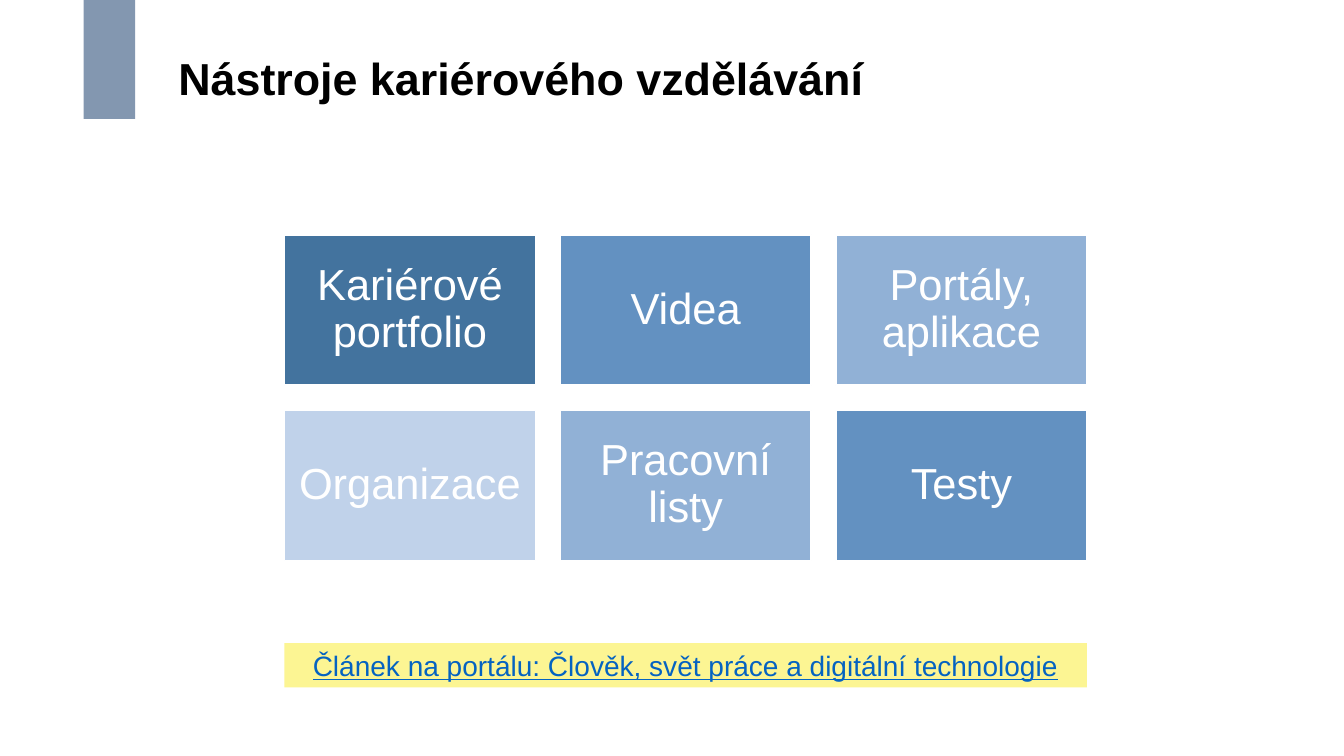
import pptx
import pptx.util
import pptx.dml.color
import pptx.enum.shapes
import pptx.enum.text

RGBColor = pptx.dml.color.RGBColor
Inches = pptx.util.Inches
ANCHOR = pptx.enum.text.MSO_ANCHOR
ALIGN = pptx.enum.text.PP_ALIGN

BLACK = RGBColor(0x00, 0x00, 0x00)
WHITE = RGBColor(0xFF, 0xFF, 0xFF)
SLATE = RGBColor(0x83, 0x97, 0xB0)
DARK_BLUE = RGBColor(0x43, 0x73, 0x9E)
MID_BLUE = RGBColor(0x63, 0x91, 0xC1)
LIGHT_BLUE = RGBColor(0x91, 0xB1, 0xD6)
PALE_BLUE = RGBColor(0xC0, 0xD2, 0xEA)
YELLOW = RGBColor(0xFC, 0xF5, 0x93)
LINK_BLUE = RGBColor(0x05, 0x63, 0xC1)

GRID_LEFT, GRID_TOP, GRID_WIDTH = 2.82, 2.33, 7.96
TILE_WIDTH, TILE_HEIGHT, ROW_PITCH = 2.49, 1.49, 1.74
TOOLS = [
    [("Kariérové portfolio", DARK_BLUE), ("Videa", MID_BLUE), ("Portály, aplikace", LIGHT_BLUE)],
    [("Organizace", PALE_BLUE), ("Pracovní listy", LIGHT_BLUE), ("Testy", MID_BLUE)],
]


def add_rect(s, box, fill, line=None):
    sp = s.shapes.add_shape(pptx.enum.shapes.MSO_SHAPE.RECTANGLE, *map(Inches, box))
    sp.shadow.inherit = False
    sp.fill.solid()
    sp.fill.fore_color.rgb = fill
    if line is None:
        sp.line.fill.background()
    else:
        sp.line.color.rgb = line
        sp.line.width = pptx.util.Pt(1)
    return sp


def write(sp, text, size, color, align=ALIGN.CENTER, anchor=ANCHOR.MIDDLE, spacing=1.0):
    tf = sp.text_frame
    tf.word_wrap = True
    tf.vertical_anchor = anchor
    p = tf.paragraphs[0]
    p.alignment = align
    p.line_spacing = spacing
    r = p.add_run()
    r.text = text
    r.font.name = "Arial"
    r.font.size = pptx.util.Pt(size)
    r.font.color.rgb = color
    return r


def add_title(s, text):
    sp = s.shapes.add_textbox(*map(Inches, (1.67, 0.49, 10.98, 0.58)))
    r = write(sp, text, 32, BLACK, ALIGN.LEFT, ANCHOR.BOTTOM, 0.7)
    r.font.bold = True


def add_tile(s, column, row, text, fill):
    pitch = (GRID_WIDTH - TILE_WIDTH) / 2
    box = (GRID_LEFT + column * pitch, GRID_TOP + row * ROW_PITCH, TILE_WIDTH, TILE_HEIGHT)
    sp = add_rect(s, box, fill, WHITE)
    tf = sp.text_frame
    tf.margin_left = tf.margin_right = tf.margin_top = tf.margin_bottom = Inches(0.12)
    write(sp, text, 31, WHITE, spacing=0.9)


def add_article_bar(s, text):
    sp = add_rect(s, (GRID_LEFT, 6.38, GRID_WIDTH, 0.44), YELLOW)
    r = write(sp, text, 20, LINK_BLUE)
    r.font.underline = True


def main():
    prs = pptx.Presentation()
    prs.slide_width, prs.slide_height = Inches(13.33), Inches(7.5)
    s = prs.slides.add_slide(prs.slide_layouts[6])
    add_rect(s, (0.83, 0, 0.51, 1.18), SLATE)
    add_title(s, "Nástroje kariérového vzdělávání")
    for row, tools in enumerate(TOOLS):
        for column, (text, fill) in enumerate(tools):
            add_tile(s, column, row, text, fill)
    add_article_bar(s, "Článek na portálu: Člověk, svět práce a digitální technologie")
    prs.save("out.pptx")


if __name__ == "__main__":
    main()
